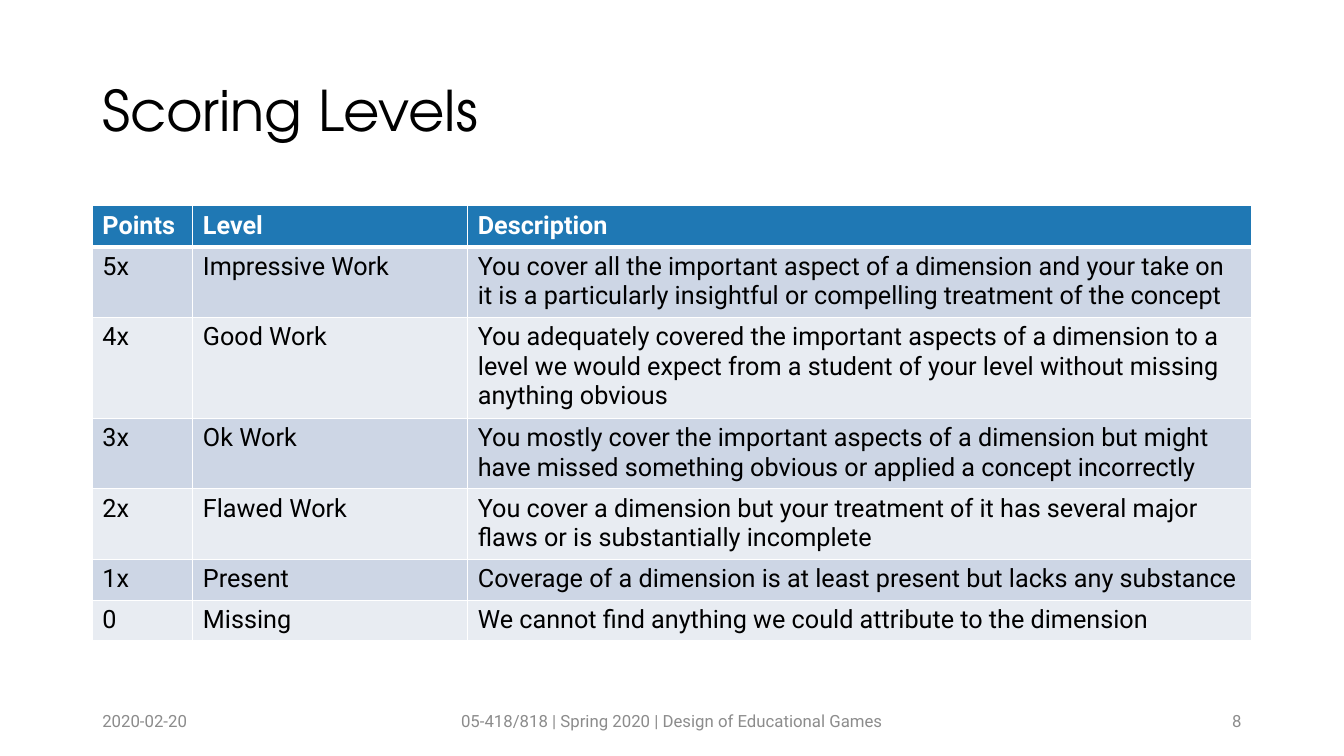
from lxml import etree
from pptx import Presentation
from pptx.dml.color import RGBColor
from pptx.enum import text
from pptx.oxml import ns
from pptx.util import Pt

BLACK = RGBColor(0x00, 0x00, 0x00)
WHITE = RGBColor(0xFF, 0xFF, 0xFF)
GREY = RGBColor(0x8C, 0x8C, 0x8C)
BLUE = RGBColor(0x1F, 0x78, 0xB4)
BAND_DARK = RGBColor(0xCD, 0xD6, 0xE5)
BAND_LIGHT = RGBColor(0xE8, 0xEC, 0xF2)

LEFT, WIDTH = 66, 828
ALIGN = text.PP_ALIGN

deck = Presentation()
deck.slide_width, deck.slide_height = Pt(960), Pt(540)
slide = deck.slides.add_slide(deck.slide_layouts[6])


def add_line(words, left, top, width, height, size, font, color, align):
    frame = slide.shapes.add_textbox(Pt(left), Pt(top), Pt(width), Pt(height)).text_frame
    frame.word_wrap = True
    frame.vertical_anchor = text.MSO_ANCHOR.MIDDLE
    line = frame.paragraphs[0]
    line.text = words
    line.alignment = align
    line.font.size, line.font.name = Pt(size), font
    line.font.color.rgb = color
    return line


def add_borders(cell, bottom_width):
    properties = cell._tc.get_or_add_tcPr()
    widths = {"a:lnL": 1, "a:lnR": 1, "a:lnT": 1, "a:lnB": bottom_width}
    for position, (side, width) in enumerate(widths.items()):
        border = etree.Element(ns.qn(side), w=str(Pt(width)))
        fill = etree.SubElement(border, ns.qn("a:solidFill"))
        etree.SubElement(fill, ns.qn("a:srgbClr"), val=str(WHITE))
        properties.insert(position, border)


title = add_line("Scoring Levels", LEFT, 28.8, WIDTH, 104.4, 40,
                 "TeX Gyre Adventor", BLACK, ALIGN.LEFT)
title.line_spacing = 0.9

for words, left, width, align in [
    ("2020-02-20", LEFT, 216, ALIGN.LEFT),
    ("05-418/818 | Spring 2020 | Design of Educational Games", 318, 324, ALIGN.CENTER),
    ("8", 678, 216, ALIGN.RIGHT),
]:
    add_line(words, left, 500.5, width, 28.75, 12, "Roboto", GREY, align)

levels = [
    (1, "Points", "Level", "Description"),
    (2, "5x", "Impressive Work",
     "You cover all the important aspect of a dimension and your take on it is a "
     "particularly insightful or compelling treatment of the concept"),
    (3, "4x", "Good Work",
     "You adequately covered the important aspects of a dimension to a level we would "
     "expect from a student of your level without missing anything obvious"),
    (2, "3x", "Ok Work",
     "You mostly cover the important aspects of a dimension but might have missed "
     "something obvious or applied a concept incorrectly"),
    (2, "2x", "Flawed Work",
     "You cover a dimension but your treatment of it has several major flaws or is "
     "substantially incomplete"),
    (1, "1x", "Present",
     "Coverage of a dimension is at least present but lacks any substance"),
    (1, "0", "Missing", "We cannot find anything we could attribute to the dimension"),
]
row_heights = {1: 29.2, 2: 49.3, 3: 70.7}
column_widths = [71.8, 196.4, 559.8]

scoring = slide.shapes.add_table(len(levels), len(column_widths), Pt(LEFT), Pt(147),
                                 Pt(WIDTH), Pt(306)).table
for column, width in zip(scoring.columns, column_widths):
    column.width = Pt(width)

for row, (line_count, *entries) in enumerate(levels):
    scoring.rows[row].height = Pt(row_heights[line_count])
    is_header = row == 0
    band = BLUE if is_header else BAND_DARK if row % 2 else BAND_LIGHT
    for column, words in enumerate(entries):
        cell = scoring.cell(row, column)
        cell.fill.solid()
        cell.fill.fore_color.rgb = band
        add_borders(cell, 3 if is_header else 1)
        entry = cell.text_frame.paragraphs[0]
        entry.text = words
        entry.font.size, entry.font.name = Pt(18), "Roboto"
        entry.font.bold = is_header
        entry.font.color.rgb = WHITE if is_header else BLACK

deck.save("out.pptx")
